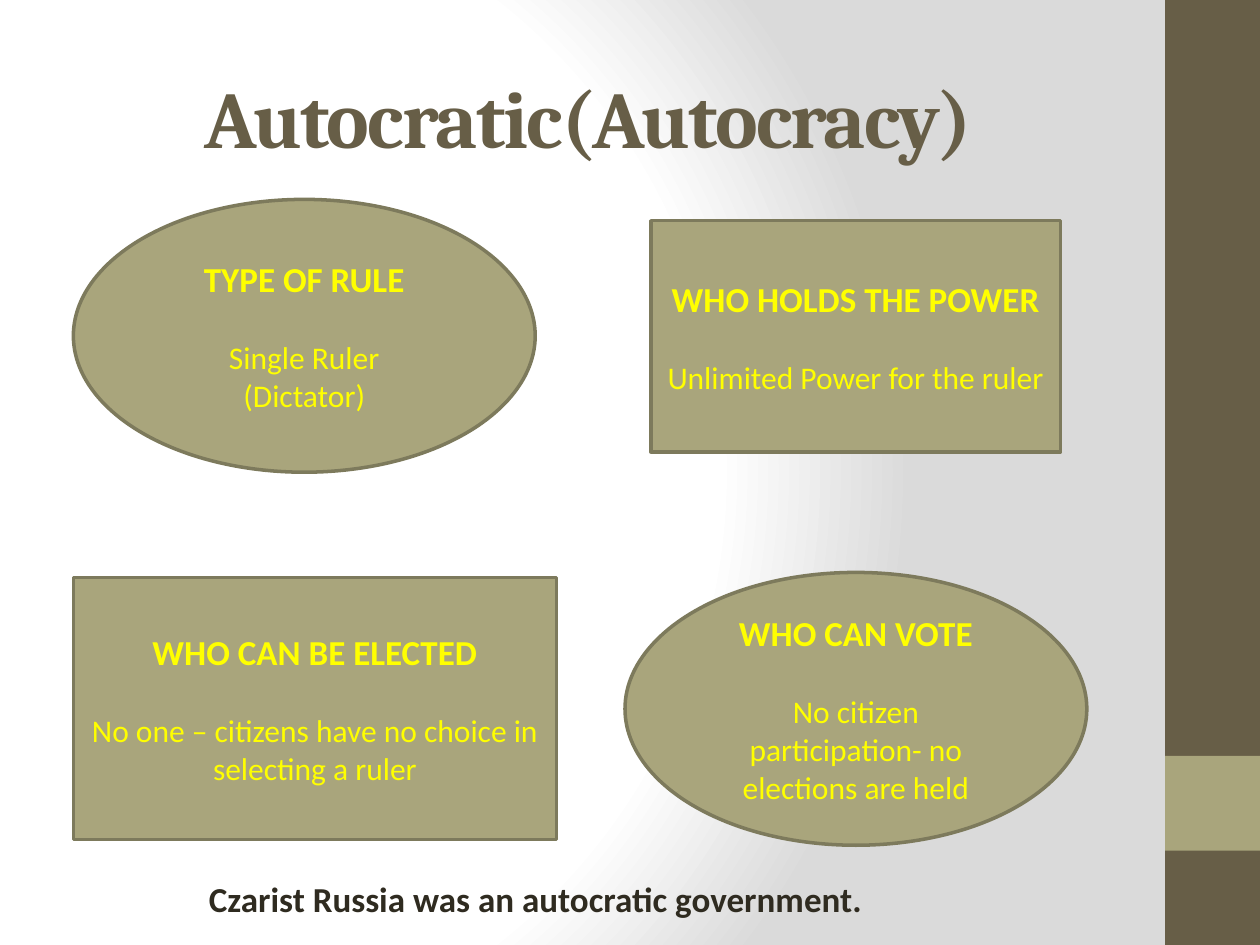
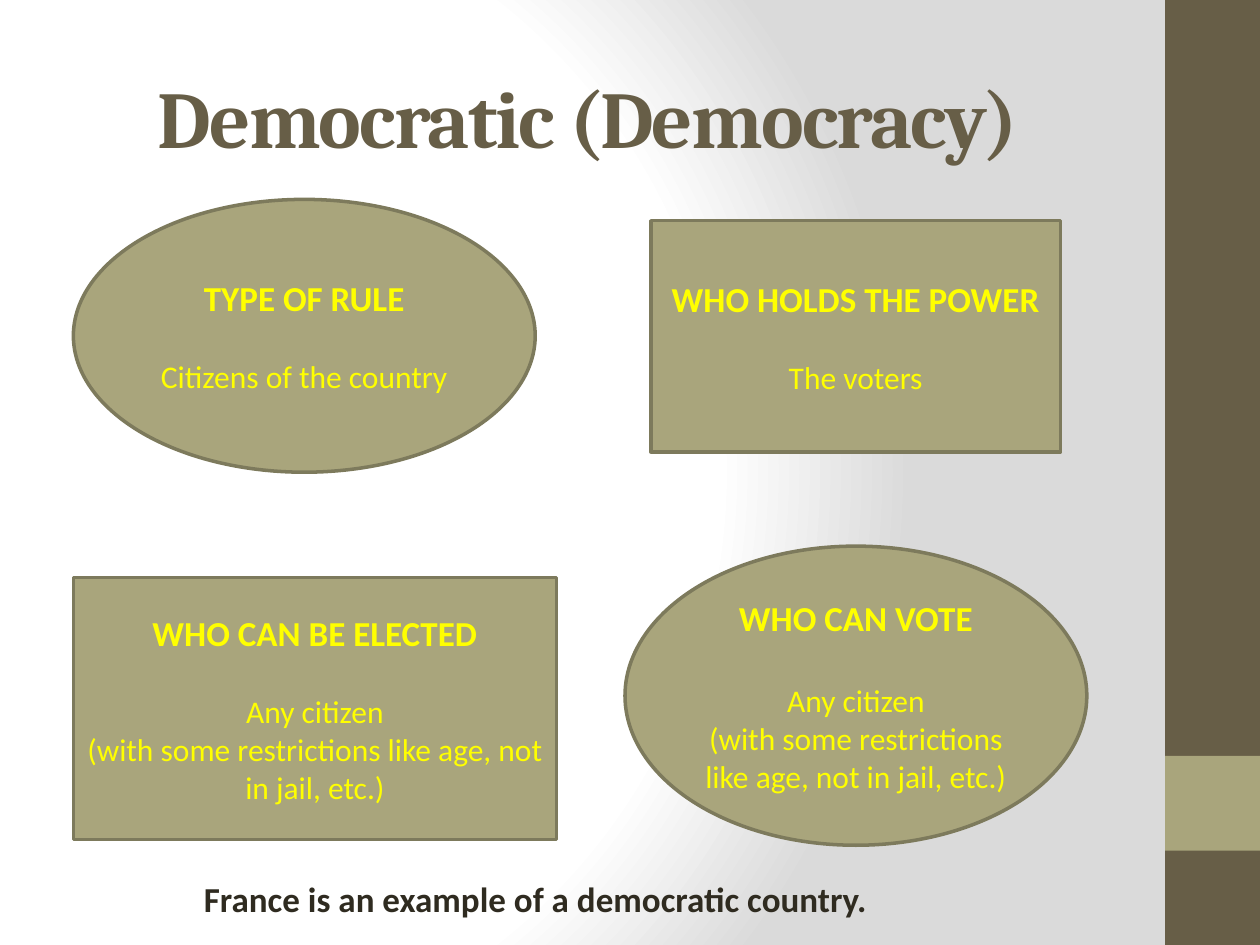
from dataclasses import dataclass

from lxml import etree
from pptx import Presentation
from pptx.dml.color import RGBColor
from pptx.enum.shapes import MSO_SHAPE as Preset
from pptx.enum.text import MSO_ANCHOR as Anchor, PP_ALIGN as Align
from pptx.oxml.ns import qn
from pptx.util import Cm, Pt

WHITE = RGBColor(0xFF, 0xFF, 0xFF)
GREY = RGBColor(0xDA, 0xDA, 0xDA)
BROWN = RGBColor(0x67, 0x5E, 0x47)
OLIVE = RGBColor(0xA9, 0xA5, 0x7C)
OLIVE_EDGE = RGBColor(0x7D, 0x7A, 0x5C)
YELLOW = RGBColor(0xFF, 0xFF, 0x00)
INK = RGBColor(0x2F, 0x2B, 0x20)

HEADING_FONT, BODY_FONT = "Cambria", "Calibri"
SLIDE_WIDTH, SLIDE_HEIGHT = 25.4, 19.05
BAND_WIDTH = 1.91
VOTE_BOTTOM = 17.04


@dataclass(frozen=True)
class Area:
    left: float
    top: float
    width: float
    height: float

    def lengths(self) -> tuple:
        return Cm(self.left), Cm(self.top), Cm(self.width), Cm(self.height)


@dataclass(frozen=True)
class Style:
    font: str
    size: int
    color: RGBColor
    bold: bool = True


@dataclass(frozen=True)
class Panel:
    heading: str
    preset: Preset
    area: Area


@dataclass(frozen=True)
class Government:
    title: str
    power: list[str]
    rule: list[str]
    elected: list[str]
    vote: list[str]
    example: str
    vote_height: float = 5.5
    vote_gap: float = 22

    def panels(self) -> list[tuple[Panel, list[str], float]]:
        vote_area = Area(12.6, VOTE_BOTTOM - self.vote_height, 9.31, self.vote_height)
        vote = Panel("WHO CAN VOTE", Preset.OVAL, vote_area)
        return [
            (POWER, self.power, 22),
            (RULE, self.rule, 22),
            (ELECTED, self.elected, 22),
            (vote, self.vote, self.vote_gap),
        ]


TITLE_STYLE = Style(HEADING_FONT, 46, BROWN)
PANEL_HEADING = Style(BODY_FONT, 20, YELLOW)
PANEL_BODY = Style(BODY_FONT, 18, YELLOW, bold=False)
EXAMPLE_STYLE = Style(BODY_FONT, 20, INK)

TITLE_AREA = Area(1.27, 0.76, 21.17, 3.18)
EXAMPLE_AREA = Area(2.54, 17.57, 16.51, 1.12)
BAND_LEFT = SLIDE_WIDTH - BAND_WIDTH
BANDS = [
    (Area(BAND_LEFT, 0, BAND_WIDTH, SLIDE_HEIGHT), BROWN),
    (Area(BAND_LEFT, 15.24, BAND_WIDTH, BAND_WIDTH), OLIVE),
]

POWER = Panel("WHO HOLDS THE POWER", Preset.RECTANGLE, Area(13.12, 4.45, 8.26, 4.66))
RULE = Panel("TYPE OF RULE", Preset.OVAL, Area(1.48, 4.02, 9.31, 5.5))
ELECTED = Panel("WHO CAN BE ELECTED", Preset.RECTANGLE, Area(1.48, 11.64, 9.74, 5.29))

ANY_CITIZEN = ["Any citizen", "(with some restrictions like age, not in jail, etc.)"]
GOVERNMENTS = [
    Government(
        title="Autocratic(Autocracy)",
        power=["Unlimited Power for the ruler"],
        rule=["Single Ruler", "(Dictator)"],
        elected=["No one – citizens have no choice in selecting a ruler"],
        vote=["No citizen participation- no elections are held"],
        example="Czarist Russia was an autocratic government.",
    ),
    Government(
        title="Democratic (Democracy)",
        power=["The voters"],
        rule=["Citizens of the country"],
        elected=ANY_CITIZEN,
        vote=ANY_CITIZEN,
        example="France is an example of a democratic country.",
        vote_height=6.03,
        vote_gap=24.4,
    ),
]


def set_background(page) -> None:
    page.background.fill.gradient()
    gradient = page.element.find(".//" + qn("a:gradFill"))
    for child in list(gradient):
        gradient.remove(child)
    stops = etree.SubElement(gradient, qn("a:gsLst"))
    for position, color in ((0, WHITE), (75, WHITE), (100, GREY)):
        stop = etree.SubElement(stops, qn("a:gs"), pos=str(position * 1000))
        etree.SubElement(stop, qn("a:srgbClr"), val=str(color))
    circle = etree.SubElement(gradient, qn("a:path"), path="circle")
    etree.SubElement(
        circle, qn("a:fillToRect"), l="20000", t="50000", r="100000", b="50000"
    )


def add_filled(page, preset: Preset, area: Area, color: RGBColor):
    box = page.shapes.add_shape(preset, *area.lengths())
    box.shadow.inherit = False
    box.fill.solid()
    box.fill.fore_color.rgb = color
    box.line.fill.background()
    return box


def write(para, text: str, style: Style) -> None:
    para.text = text
    para.alignment = Align.CENTER
    para.font.name = style.font
    para.font.size = Pt(style.size)
    para.font.bold = style.bold
    para.font.color.rgb = style.color


def add_text(page, area: Area, text: str, style: Style, anchor: Anchor):
    frame = page.shapes.add_textbox(*area.lengths()).text_frame
    frame.word_wrap = True
    frame.vertical_anchor = anchor
    write(frame.paragraphs[0], text, style)
    return frame.paragraphs[0]


def add_panel(page, panel: Panel, lines: list[str], gap: float) -> None:
    box = add_filled(page, panel.preset, panel.area, OLIVE)
    box.line.color.rgb = OLIVE_EDGE
    box.line.width = Pt(2)
    frame = box.text_frame
    frame.word_wrap = True
    frame.vertical_anchor = Anchor.MIDDLE
    write(frame.paragraphs[0], panel.heading, PANEL_HEADING)
    for line in lines:
        write(frame.add_paragraph(), line, PANEL_BODY)
    frame.paragraphs[1].space_before = Pt(gap)


def add_page(deck, government: Government) -> None:
    page = deck.slides.add_slide(deck.slide_layouts[6])
    set_background(page)
    for area, color in BANDS:
        add_filled(page, Preset.RECTANGLE, area, color)
    title = add_text(page, TITLE_AREA, government.title, TITLE_STYLE, Anchor.MIDDLE)
    for span in title.runs:
        span.font._element.set("spc", "-100")
    for panel, lines, gap in government.panels():
        add_panel(page, panel, lines, gap)
    add_text(page, EXAMPLE_AREA, government.example, EXAMPLE_STYLE, Anchor.TOP)


def main() -> None:
    deck = Presentation()
    deck.slide_width = Cm(SLIDE_WIDTH)
    deck.slide_height = Cm(SLIDE_HEIGHT)
    for government in GOVERNMENTS:
        add_page(deck, government)
    deck.save("out.pptx")


if __name__ == "__main__":
    main()
